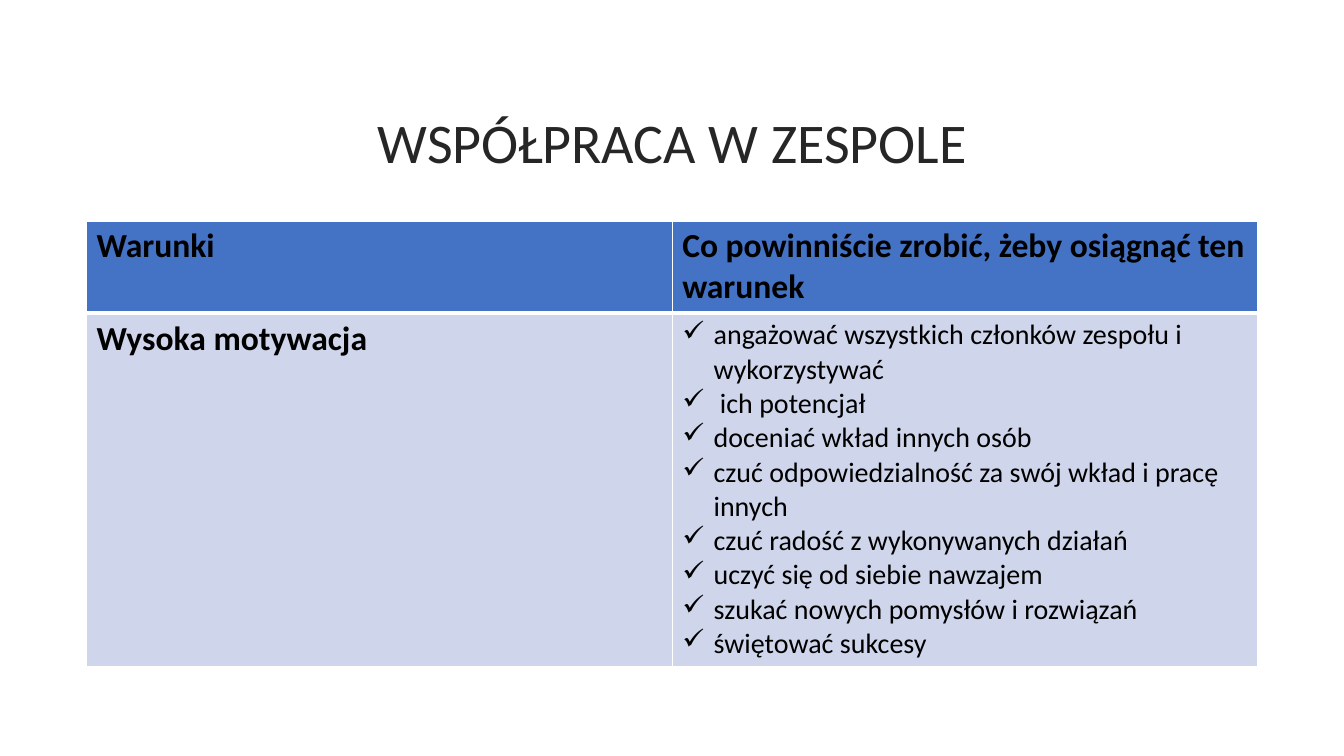
from lxml.etree import SubElement
from pptx import Presentation
from pptx.dml.color import RGBColor
from pptx.enum.text import MSO_ANCHOR, PP_ALIGN
from pptx.oxml import parse_xml
from pptx.oxml.ns import nsdecls, qn
from pptx.util import Cm, Pt

TITLE = "WSPÓŁPRACA W ZESPOLE"
HEADERS = ["Warunki", "Co powinniście zrobić, żeby osiągnąć ten warunek"]
CONDITION = "Wysoka motywacja"
ACTIONS = [
    "angażować wszystkich członków zespołu i wykorzystywać",
    " ich potencjał",
    "doceniać wkład innych osób",
    "czuć odpowiedzialność za swój wkład i pracę innych",
    "czuć radość z wykonywanych działań",
    "uczyć się od siebie nawzajem",
    "szukać nowych pomysłów i rozwiązań",
    "świętować sukcesy",
]
THEME = {
    "font": "Calibri", "title": "262626", "text": "000000",
    "header": "4472C4", "body": "CFD5EA", "border": "FFFFFF",
    "title_size": 40, "heading_size": 24, "action_size": 20,
    "thin": 1, "thick": 3,
}
COLUMN_WIDTH = Cm(14.76)
ROW_HEIGHTS = [Cm(2.3), Cm(8.9)]
BULLET_INDENT = Cm(0.79)


def write_text(frame, lines, size, color=THEME["text"], bold=False,
               align=PP_ALIGN.LEFT, spacing=None, bullet=None):
    for number, line in enumerate(lines):
        paragraph = frame.add_paragraph() if number else frame.paragraphs[0]
        paragraph.alignment = align
        paragraph.line_spacing = spacing
        run = paragraph.add_run()
        run.text = line
        run.font.name = THEME["font"]
        run.font.size = Pt(size)
        run.font.bold = bold
        run.font.color.rgb = RGBColor.from_string(color)
        if bullet:
            properties = paragraph._p.get_or_add_pPr()
            properties.set("marL", str(BULLET_INDENT))
            properties.set("indent", str(-BULLET_INDENT))
            SubElement(properties, qn("a:buChar")).set("char", bullet)


def style_cell(cell, fill, top, bottom):
    cell.fill.solid()
    cell.fill.fore_color.rgb = RGBColor.from_string(fill)
    properties = cell._tc.get_or_add_tcPr()
    widths = {"L": THEME["thin"], "R": THEME["thin"], "T": top, "B": bottom}
    for position, (side, width) in enumerate(widths.items()):
        properties.insert(position, parse_xml(
            f'<a:ln{side} {nsdecls("a")} w="{Pt(width)}"><a:solidFill>'
            f'<a:srgbClr val="{THEME["border"]}"/></a:solidFill></a:ln{side}>'))


def add_title(slide):
    box = slide.shapes.add_textbox(Cm(2.97), Cm(1.75), Cm(27.94), Cm(3.81))
    frame = box.text_frame
    frame.word_wrap = True
    frame.vertical_anchor = MSO_ANCHOR.MIDDLE
    write_text(frame, [TITLE], THEME["title_size"], color=THEME["title"],
               align=PP_ALIGN.CENTER, spacing=0.9)


def add_conditions_table(slide):
    table = slide.shapes.add_table(2, 2, Cm(2.18), Cm(5.57),
                                   COLUMN_WIDTH * 2, sum(ROW_HEIGHTS)).table
    for column in table.columns:
        column.width = COLUMN_WIDTH
    for row, height in zip(table.rows, ROW_HEIGHTS):
        row.height = height
    for index, header in enumerate(HEADERS):
        style_cell(table.cell(0, index), THEME["header"], THEME["thin"], THEME["thick"])
        style_cell(table.cell(1, index), THEME["body"], THEME["thick"], THEME["thin"])
        write_text(table.cell(0, index).text_frame, [header],
                   THEME["heading_size"], bold=True)
    write_text(table.cell(1, 0).text_frame, [CONDITION],
               THEME["heading_size"], bold=True)
    write_text(table.cell(1, 1).text_frame, ACTIONS,
               THEME["action_size"], bullet="✓")


def main():
    presentation = Presentation()
    presentation.slide_width = Cm(33.87)
    presentation.slide_height = Cm(19.05)
    slide = presentation.slides.add_slide(presentation.slide_layouts[6])
    add_conditions_table(slide)
    add_title(slide)
    presentation.save("out.pptx")


if __name__ == "__main__":
    main()
